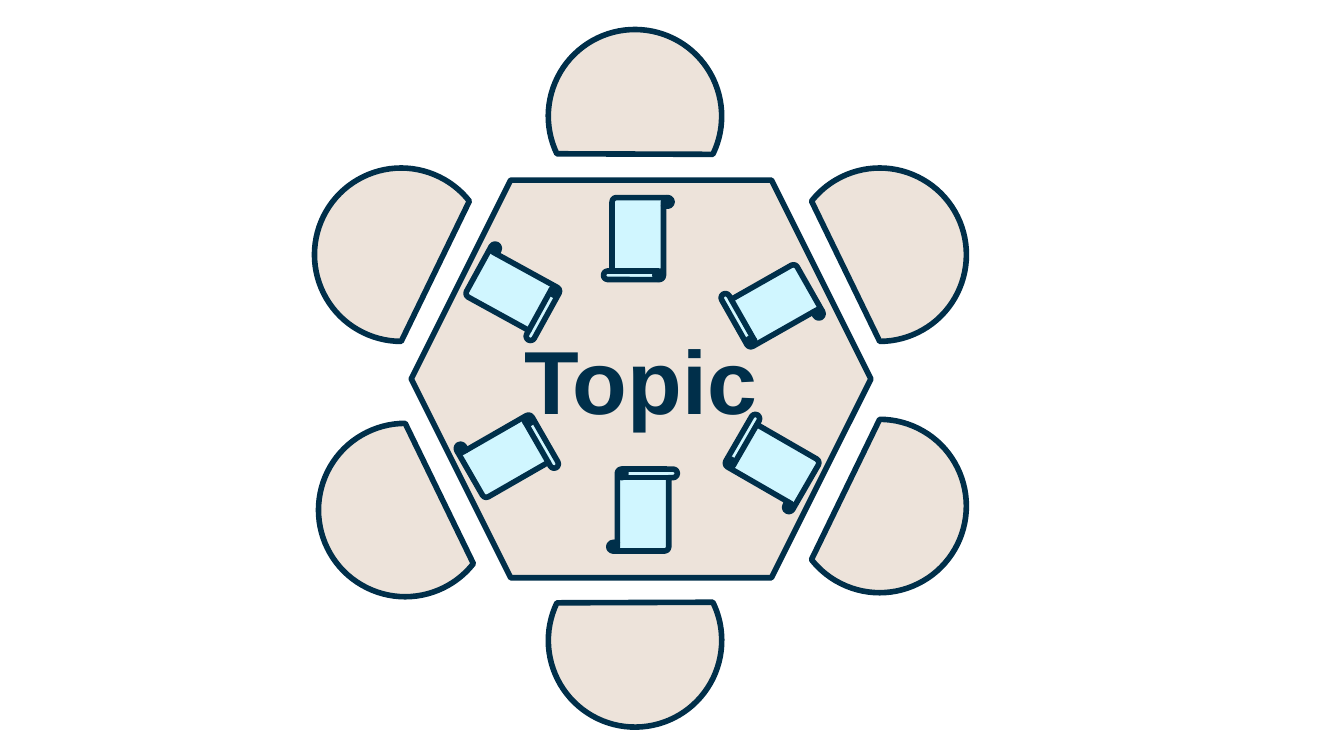
"""Build a slide of six seats and scrolls around a hexagonal discussion table."""
import pptx
import pptx.dml.color
import pptx.enum.shapes
import pptx.enum.text
import pptx.oxml.ns
import pptx.util

Inches = pptx.util.Inches
Preset = pptx.enum.shapes.MSO_SHAPE
COLORS = {"ink": "002F4A", "wood": "EDE3DA", "paper": "D0F6FF"}
CHAIR_SIZE = 1.29
CHAIR_ARC = (22.9, 162)
SCROLL_SIZE = (0.51, 0.61)

CHAIRS = [
    (2.37, 3.15, 0, False),
    (5.9, 3.12, 0, True),
    (2.34, 1.25, 180, True),
    (5.9, 1.25, 180, False),
    (4.08, 4.12, 295.7, False),
    (4.08, 0.22, 244.3, True),
]
SCROLLS = [
    (4.53, 3.49, 0),
    (4.49, 1.47, 180),
    (5.49, 1.97, 240.4),
    (5.49, 3.14, 300),
    (3.56, 1.87, 118.8),
    (3.52, 3.09, 60.1),
]


def rgb(name):
    return pptx.dml.color.RGBColor.from_string(COLORS[name])


def write(shape, text, *, size, color, font="Arial", bold=False):
    frame = shape.text_frame
    frame.word_wrap = True
    frame.vertical_anchor = pptx.enum.text.MSO_ANCHOR.MIDDLE
    frame.margin_left = frame.margin_right = Inches(0.1)
    frame.margin_top = frame.margin_bottom = Inches(0.1)
    paragraph = frame.paragraphs[0]
    paragraph.alignment = pptx.enum.text.PP_ALIGN.CENTER
    run = paragraph.add_run()
    run.text = text
    run.font.name = font
    run.font.size = pptx.util.Pt(size)
    run.font.bold = bold
    run.font.color.rgb = rgb(color)


class Seating:
    def __init__(self, slide, line_width=3):
        self.slide = slide
        self.line_width = pptx.util.Pt(line_width)
        self.furniture = slide.shapes.add_group_shape()

    def outline(self, parent, preset, box, fill, rotation=0):
        shape = parent.shapes.add_shape(preset, *map(Inches, box))
        shape.shadow.inherit = False
        shape.fill.solid()
        shape.fill.fore_color.rgb = rgb(fill)
        shape.line.color.rgb = rgb("ink")
        shape.line.width = self.line_width
        shape.rotation = rotation
        return shape

    def table(self, box, topic):
        table = self.outline(self.furniture, Preset.HEXAGON, box, "wood")
        write(table, topic, size=48, color="ink", bold=True)

    def chair(self, left, top, rotation, flipped):
        box = (left, top, CHAIR_SIZE, CHAIR_SIZE)
        chair = self.outline(self.furniture, Preset.CHORD, box, "wood", rotation)
        for index, arc_end in enumerate(CHAIR_ARC):
            chair.adjustments[index] = arc_end
        if flipped:
            chair.element.spPr.find(pptx.oxml.ns.qn("a:xfrm")).set("flipH", "1")

    def scroll(self, left, top, rotation):
        box = (left, top, *SCROLL_SIZE)
        self.outline(self.slide, Preset.VERTICAL_SCROLL, box, "paper", rotation)


def main():
    deck = pptx.Presentation()
    deck.slide_width = Inches(10)
    deck.slide_height = deck.slide_width * 9 // 16
    seating = Seating(deck.slides.add_slide(deck.slide_layouts[6]))
    seating.table((3.06, 1.34, 3.42, 2.96), "Topic")
    for chair in CHAIRS:
        seating.chair(*chair)
    for scroll in SCROLLS:
        seating.scroll(*scroll)
    deck.save("out.pptx")


if __name__ == "__main__":
    main()
